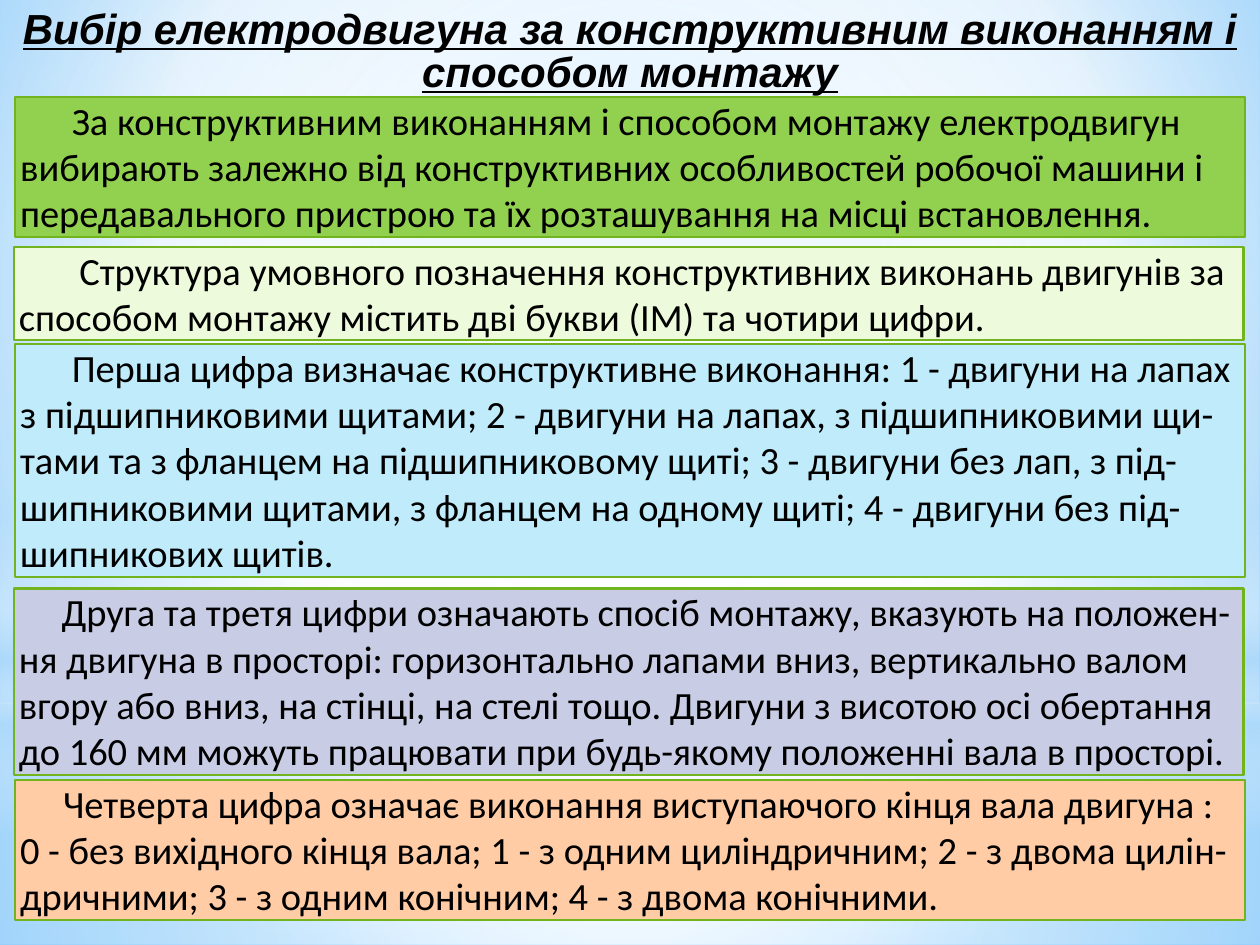
"""Build a slide on choosing an electric motor by construction and mounting."""
from lxml import etree
from pptx import Presentation
from pptx.dml.color import RGBColor
from pptx.enum.shapes import MSO_SHAPE
from pptx.enum.text import MSO_ANCHOR, MSO_AUTO_SIZE, PP_ALIGN
from pptx.oxml.ns import qn
from pptx.util import Pt

PX = 9144
RECTANGLE, OVAL = MSO_SHAPE.RECTANGLE, MSO_SHAPE.OVAL
TOP, GROW = MSO_ANCHOR.TOP, MSO_AUTO_SIZE.SHAPE_TO_FIT_TEXT
LEFT, CENTER = PP_ALIGN.LEFT, PP_ALIGN.CENTER
BLACK = RGBColor(0x00, 0x00, 0x00)
WHITE = RGBColor(0xFF, 0xFF, 0xFF)
SKY = RGBColor(0x9E, 0xD5, 0xFF)
AZURE = RGBColor(0x5B, 0xB9, 0xFF)
HAZE = RGBColor(0xB4, 0xDC, 0xFA)
BORDER = RGBColor(0x72, 0xB4, 0x1D)
GREEN = RGBColor(0x92, 0xD0, 0x50)
LIME = RGBColor(0xED, 0xFB, 0xDC)
CYAN = RGBColor(0xBF, 0xEB, 0xFA)
LAVENDER = RGBColor(0xC8, 0xCD, 0xE5)
PEACH = RGBColor(0xFF, 0xCC, 0xA6)
MIDDLE = (50, 50, 50, 50)


def shade(owner, stops, focus):
    """Replace the solid fill of an element by a gradient, linear if it has no focus."""
    solid = owner.find(qn("a:solidFill"))
    gradient = etree.Element(qn("a:gradFill"), rotWithShape="1")
    stop_list = etree.SubElement(gradient, qn("a:gsLst"))
    for position, color, opacity in stops:
        stop = etree.SubElement(stop_list, qn("a:gs"), pos=str(position * 1000))
        tint = etree.SubElement(stop, qn("a:srgbClr"), val=str(color))
        etree.SubElement(tint, qn("a:alpha"), val=str(opacity * 1000))
    if focus:
        path = etree.SubElement(gradient, qn("a:path"), {"path": "circle"})
        sides = {side: str(value * 1000) for side, value in zip("ltrb", focus)}
        etree.SubElement(path, qn("a:fillToRect"), sides)
    else:
        etree.SubElement(gradient, qn("a:lin"), ang="5400000", scaled="0")
    owner.replace(solid, gradient)


def write(shape, text, font, size, align, inset):
    """Put one paragraph into a shape and return it with its run."""
    frame = shape.text_frame
    frame.text = text
    frame.word_wrap = True
    frame.auto_size = GROW
    frame.vertical_anchor = TOP
    frame.margin_left = frame.margin_right = inset * PX
    frame.margin_top = frame.margin_bottom = 0
    para = frame.paragraphs[0]
    para.alignment = align
    span = para.runs[0]
    span.font.name = font
    span.font.size = Pt(size)
    span.font.color.rgb = BLACK
    return para, span


deck = Presentation()
deck.slide_width, deck.slide_height = 1000 * PX, 750 * PX
page = deck.slides.add_slide(deck.slide_layouts[5])

page.background.fill.solid()
page.background.fill.fore_color.rgb = WHITE
backdrop = page.element.find(".//" + qn("p:bgPr"))
shade(backdrop, [(0, SKY, 100), (60, WHITE, 100), (100, AZURE, 100)], (20, 10, 20, 60))

layers = [
    (RECTANGLE, 558, 192, [(0, WHITE, 91), (37, WHITE, 76), (100, HAZE, 79)], MIDDLE),
    (RECTANGLE, 0, 558, [(0, WHITE, 89), (48, WHITE, 62), (100, HAZE, 79)], MIDDLE),
    (RECTANGLE, 412, 250, [(0, WHITE, 0), (29, WHITE, 30), (45, HAZE, 40),
                           (55, WHITE, 26), (65, HAZE, 60), (100, WHITE, 0)], None),
    (OVAL, 175, 558, [(0, WHITE, 100), (56, WHITE, 0)], MIDDLE),
]
for kind, top, height, stops, focus in layers:
    layer = page.shapes.add_shape(kind, 0, top * PX, 1000 * PX, height * PX)
    layer.shadow.inherit = False
    layer.line.fill.background()
    layer.fill.solid()
    layer.fill.fore_color.rgb = WHITE
    shade(layer.element.spPr, stops, focus)

title = page.shapes.title
page.shapes.element.append(title.element)
title.left, title.top, title.width, title.height = 12 * PX, 8 * PX, 976 * PX, 69 * PX
para, span = write(
    title, "Вибір електродвигуна за конструктивним виконанням і способом монтажу",
    "Arial", 24, CENTER, 0)
para.line_spacing = 0.85
span.font.bold = span.font.italic = span.font.underline = True

panels = [
    (12, 77, 111, GREEN, 41,
     "За конструктивним виконанням і способом монтажу електродвигун вибирають "
     "залежно від конструктивних особливостей робочої машини і передавального "
     "пристрою та їх розташування на місці встановлення."),
    (11, 196, 74, LIME, 48,
     "Структура умовного позначення конструктивних виконань двигунів за "
     "способом монтажу містить дві букви (ІМ) та чотири цифри."),
    (12, 273, 185, CYAN, 41,
     "Перша цифра визначає конструктивне виконання: 1 - двигуни на лапах з "
     "підшипниковими щитами; 2 - двигуни на лапах, з підшипниковими щи-тами та "
     "з фланцем на підшипниковому щиті; 3 - двигуни без лап, з під-шипниковими "
     "щитами, з фланцем на одному щиті; 4 - двигуни без під-шипникових щитів."),
    (11, 467, 148, LAVENDER, 34,
     "Друга та третя цифри означають спосіб монтажу, вказують на положен-ня "
     "двигуна в просторі: горизонтально лапами вниз, вертикально валом вгору "
     "або вниз, на стінці, на стелі тощо. Двигуни з висотою осі обертання до "
     "160 мм можуть працювати при будь-якому положенні вала в просторі."),
    (12, 619, 111, PEACH, 34,
     "Четверта цифра означає виконання виступаючого кінця вала двигуна : 0 - без "
     "вихідного кінця вала; 1 - з одним циліндричним; 2 - з двома цилін-дричними; "
     "3 - з одним конічним; 4 - з двома конічними."),
]
for left, top, height, color, indent, text in panels:
    panel = page.shapes.add_shape(RECTANGLE, left * PX, top * PX, 976 * PX, height * PX)
    panel.shadow.inherit = False
    panel.fill.solid()
    panel.fill.fore_color.rgb = color
    panel.line.color.rgb = BORDER
    panel.line.width = Pt(1.25)
    para, span = write(panel, text, "Calibri", 22, LEFT, 4)
    para._p.get_or_add_pPr().set("indent", str(indent * PX))

deck.save("out.pptx")
